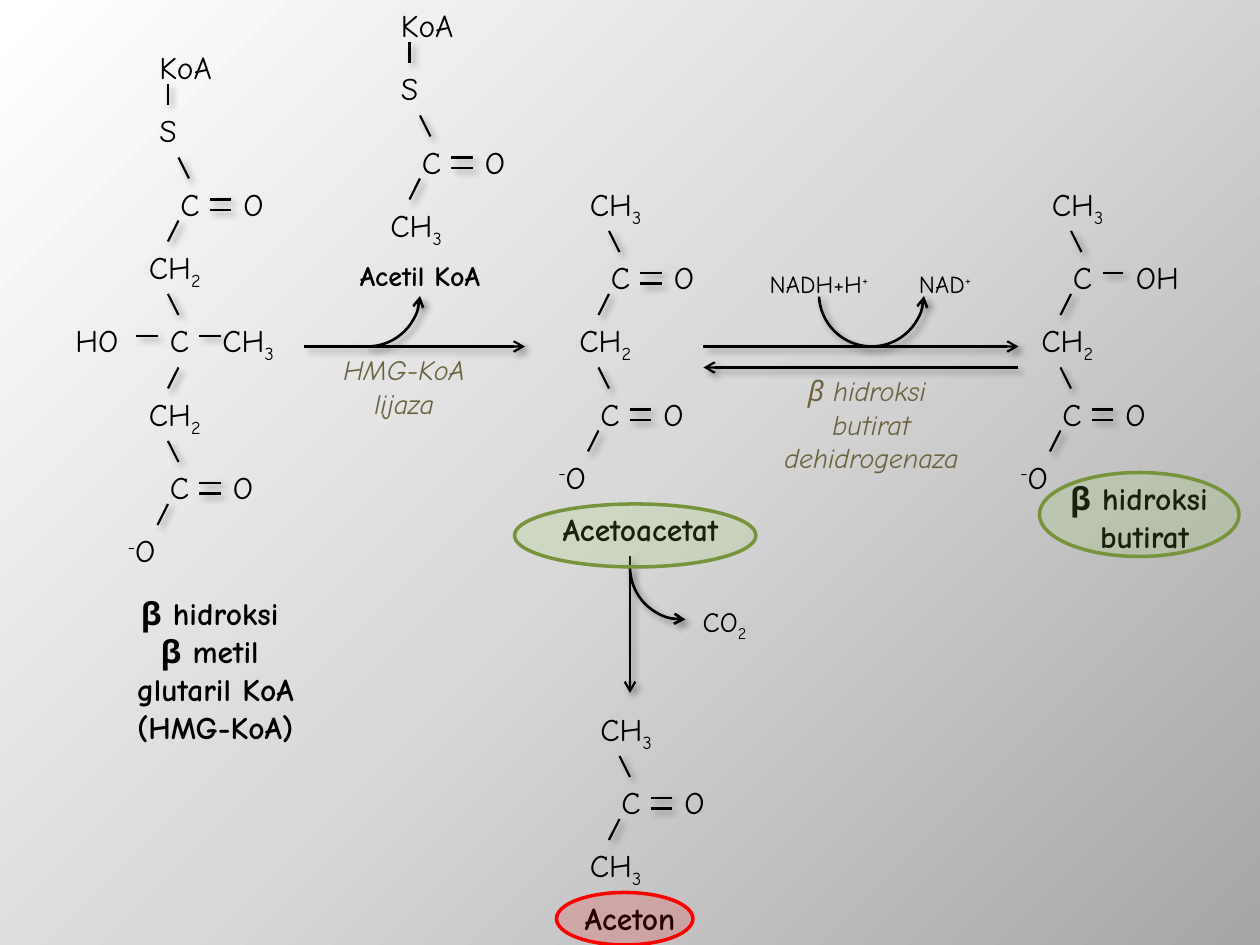
from copy import deepcopy
from dataclasses import dataclass

from lxml import etree
from pptx import Presentation
from pptx.dml.color import RGBColor
from pptx.enum.shapes import MSO_CONNECTOR, MSO_SHAPE
from pptx.enum.text import MSO_AUTO_SIZE, PP_ALIGN
from pptx.oxml.ns import qn
from pptx.util import Pt

STRAIGHT = MSO_CONNECTOR.STRAIGHT
ARC, OVAL = MSO_SHAPE.ARC, MSO_SHAPE.OVAL
FIT_SHAPE, FIXED = MSO_AUTO_SIZE.SHAPE_TO_FIT_TEXT, MSO_AUTO_SIZE.NONE
LEFT, CENTER = PP_ALIGN.LEFT, PP_ALIGN.CENTER

FONT = "Comic Neue"
BLACK = RGBColor(0x00, 0x00, 0x00)
OLIVE = RGBColor(0x6B, 0x63, 0x3D)
LIME = RGBColor(0x92, 0xD0, 0x50)
GREEN = RGBColor(0x77, 0x93, 0x3C)
RED = RGBColor(0xFF, 0x00, 0x00)
BACKGROUND_STOPS = (
    (0, RGBColor(0xFF, 0xFF, 0xFF)),
    (0.5, RGBColor(0xD9, 0xD9, 0xD9)),
    (1, RGBColor(0xA6, 0xA6, 0xA6)),
)
SUBSCRIPT, SUPERSCRIPT = -25000, 30000
ATOM_HEIGHT = 28.8
ARC_SIZE = 60


@dataclass(frozen=True)
class Run:
    text: str
    baseline: int = 0


@dataclass(frozen=True)
class Atom:
    runs: tuple[Run, ...]
    width: float
    wrap: bool = False


@dataclass(frozen=True)
class Caption:
    left: float
    top: float
    width: float
    height: float
    lines: tuple[tuple[Run, ...], ...]
    size: float = 18
    color: RGBColor = BLACK
    bold: bool = False
    italic: bool = False


@dataclass(frozen=True)
class Highlight:
    left: float
    top: float
    width: float
    height: float
    fill: RGBColor
    outline: RGBColor


@dataclass(frozen=True)
class CurvedArrow:
    left: float
    top: float
    start: float
    end: float


C = Atom((Run("C"),), 25.2)
O = Atom((Run("O"),), 28.8)
S = Atom((Run("S"),), 27.4)
OH = Atom((Run("OH"),), 43.2)
HO = Atom((Run("HO"),), 43.2)
KOA = Atom((Run("KoA"),), 48)
CH2 = Atom((Run("CH"), Run("2", SUBSCRIPT)), 48, True)
CH3 = Atom((Run("CH"), Run("3", SUBSCRIPT)), 48, True)
O_MINUS = Atom((Run("-", SUPERSCRIPT), Run("O")), 36, True)


def plain(*lines: str) -> tuple[tuple[Run, ...], ...]:
    return tuple((Run(line),) for line in lines)


CAPTIONS = (
    Caption(42, 336, 162, 84, plain("β hidroksi ", "β metil ", "glutaril KoA", "(HMG-KoA)"), bold=True),
    Caption(174, 198, 114, 48, plain("HMG-KoA lijaza"), 16, OLIVE, italic=True),
    Caption(180, 144, 120, 30, plain("Acetil KoA"), 16, bold=True),
    Caption(300, 288, 132, 30, plain("Acetoacetat"), bold=True),
    Caption(588, 270, 132, 48, plain("β hidroksi ", "butirat"), bold=True),
    Caption(390, 342, 48, 24, ((Run("CO"), Run("2", SUBSCRIPT)),), 16),
    Caption(312, 510, 96, 30, plain("Aceton"), bold=True),
    Caption(420, 150, 96, 30, ((Run("NADH+H"), Run("+", SUPERSCRIPT)),), 14),
    Caption(492, 150, 96, 30, ((Run("NAD"), Run("+", SUPERSCRIPT)),), 14),
    Caption(432, 210, 132, 72, plain("β hidroksi ", "butirat", "dehidrogenaza"), 16, OLIVE, italic=True),
)
REACTION_ARROWS = ((174, 198, 300, 198), (402, 198, 582, 198), (582, 210, 402, 210), (360, 318, 360, 396))
CURVED_ARROWS = (
    CurvedArrow(180, 138, 1.345, 54.175),
    CurvedArrow(360, 294, 52.124, 107.787),
    CurvedArrow(468, 138, 1.345, 106.212),
)
HIGHLIGHTS = (
    Highlight(294, 288, 138, 36, LIME, GREEN),
    Highlight(594, 270, 114, 48, LIME, GREEN),
    Highlight(318, 510, 78, 30, RED, RED),
)


def add_shadow(shape) -> None:
    effects = etree.SubElement(shape.element.spPr, qn("a:effectLst"))
    shadow = etree.SubElement(effects, qn("a:outerShdw"), blurRad=str(Pt(4)), dist=str(Pt(3)),
                              dir="2700000", algn="tl", rotWithShape="0")
    color = etree.SubElement(shadow, qn("a:srgbClr"), val=str(BLACK))
    etree.SubElement(color, qn("a:alpha"), val="40000")


def add_arrowhead(shape, end: str) -> None:
    etree.SubElement(shape.element.spPr.find(qn("a:ln")), qn(end), type="arrow")


def add_line(shapes, x1: float, y1: float, x2: float, y2: float, arrow: bool = False) -> None:
    line = shapes.add_connector(STRAIGHT, Pt(x1), Pt(y1), Pt(x2), Pt(y2))
    line.line.color.rgb = BLACK
    line.line.width = Pt(1.25)
    if arrow:
        add_arrowhead(line, "a:tailEnd")
    add_shadow(line)


def add_text(shapes, caption: Caption, alignment=CENTER, wrap: bool = True, fit=FIXED) -> None:
    box = shapes.add_textbox(Pt(caption.left), Pt(caption.top), Pt(caption.width), Pt(caption.height))
    frame = box.text_frame
    frame.word_wrap = wrap
    frame.auto_size = fit
    for index, runs in enumerate(caption.lines):
        paragraph = frame.add_paragraph() if index else frame.paragraphs[0]
        paragraph.alignment = alignment
        font = paragraph.font
        font.name, font.size = FONT, Pt(caption.size)
        font.bold, font.italic = caption.bold, caption.italic
        font.color.rgb = caption.color
        for part in runs:
            run = paragraph.add_run()
            run.text = part.text
            if part.baseline:
                run._r.get_or_add_rPr().set("baseline", str(part.baseline))


def add_atom(shapes, atom: Atom, x: float, y: float) -> None:
    add_text(shapes, Caption(x, y, atom.width, ATOM_HEIGHT, (atom.runs,)), LEFT, atom.wrap, FIT_SHAPE)


def add_carbon(shapes, x: float, y: float) -> None:
    add_atom(shapes, C, x, y)
    add_line(shapes, x + 12, y, x + 6, y - 12)


def add_branch(shapes, x: float, y: float, below: Atom, side: Atom = O, levels: tuple[int, ...] = (12, 18)) -> None:
    add_carbon(shapes, x, y)
    add_atom(shapes, side, x + 36, y)
    for level in levels:
        add_line(shapes, x + 24, y + level, x + 36, y + level)
    add_line(shapes, x, y + 36, x + 6, y + 24)
    add_atom(shapes, below, x - (24 if below is O_MINUS else 18), y + 36)


def add_thioester(shapes, x: float, y: float, below: Atom) -> None:
    add_atom(shapes, KOA, x, y)
    add_line(shapes, x + 12, y + 24, x + 12, y + 36)
    add_atom(shapes, S, x, y + 36)
    add_branch(shapes, x + 12, y + 78, below)


def add_methyl_ketone(shapes, x: float, y: float, below: Atom, **side) -> None:
    add_atom(shapes, CH3, x - 12, y - 42)
    add_branch(shapes, x, y, below, **side)


def add_hmg_koa(shapes) -> None:
    add_thioester(shapes, 84, 24, CH2)
    add_carbon(shapes, 90, 180)
    add_atom(shapes, HO, 36, 180)
    add_atom(shapes, CH3, 120, 180)
    for x in (78, 114):
        add_line(shapes, x, 192, x + 12, 192)
    add_line(shapes, 96, 222, 102, 210)
    add_atom(shapes, CH2, 78, 222)
    add_branch(shapes, 90, 264, O_MINUS)


def add_keto_acid(shapes, x: float, **side) -> None:
    add_methyl_ketone(shapes, x, 144, CH2, **side)
    add_branch(shapes, x - 6, 222, O_MINUS)


def add_curved_arrow(shapes, arrow: CurvedArrow) -> None:
    shape = shapes.add_shape(ARC, Pt(arrow.left), Pt(arrow.top), Pt(ARC_SIZE), Pt(ARC_SIZE))
    shape.adjustments[0], shape.adjustments[1] = arrow.start, arrow.end
    shape.fill.background()
    shape.line.color.rgb = BLACK
    shape.line.width = Pt(1.5)
    add_arrowhead(shape, "a:headEnd")
    add_shadow(shape)


def add_highlight(shapes, mark: Highlight) -> None:
    shape = shapes.add_shape(OVAL, Pt(mark.left), Pt(mark.top), Pt(mark.width), Pt(mark.height))
    shape.shadow.inherit = False
    shape.fill.solid()
    shape.fill.fore_color.rgb = mark.fill
    color = shape.element.spPr.find(qn("a:solidFill")).find(qn("a:srgbClr"))
    etree.SubElement(color, qn("a:alpha"), val="16000")
    shape.line.color.rgb = mark.outline
    shape.line.width = Pt(2)


def set_background(slide) -> None:
    fill = slide.background.fill
    fill.gradient()
    fill.gradient_angle = 315
    stop_list = next(slide.element.iter(qn("a:gsLst")))
    stop_list.append(deepcopy(stop_list[0]))
    for stop, (position, color) in zip(fill.gradient_stops, BACKGROUND_STOPS):
        stop.position = position
        stop.color.rgb = color


def main() -> None:
    presentation = Presentation()
    presentation.slide_width, presentation.slide_height = Pt(720), Pt(540)
    slide = presentation.slides.add_slide(presentation.slide_layouts[6])
    set_background(slide)
    shapes = slide.shapes
    add_hmg_koa(shapes.add_group_shape().shapes)
    add_thioester(shapes.add_group_shape().shapes, 222, 0, CH3)
    add_keto_acid(shapes.add_group_shape().shapes, 342)
    add_keto_acid(shapes.add_group_shape().shapes, 606, side=OH, levels=(12,))
    add_methyl_ketone(shapes.add_group_shape().shapes, 348, 444, CH3)
    for ends in REACTION_ARROWS:
        add_line(shapes, *ends, arrow=True)
    for arrow in CURVED_ARROWS:
        add_curved_arrow(shapes, arrow)
    for caption in CAPTIONS:
        add_text(shapes, caption)
    for mark in HIGHLIGHTS:
        add_highlight(shapes, mark)
    presentation.save("out.pptx")


if __name__ == "__main__":
    main()
